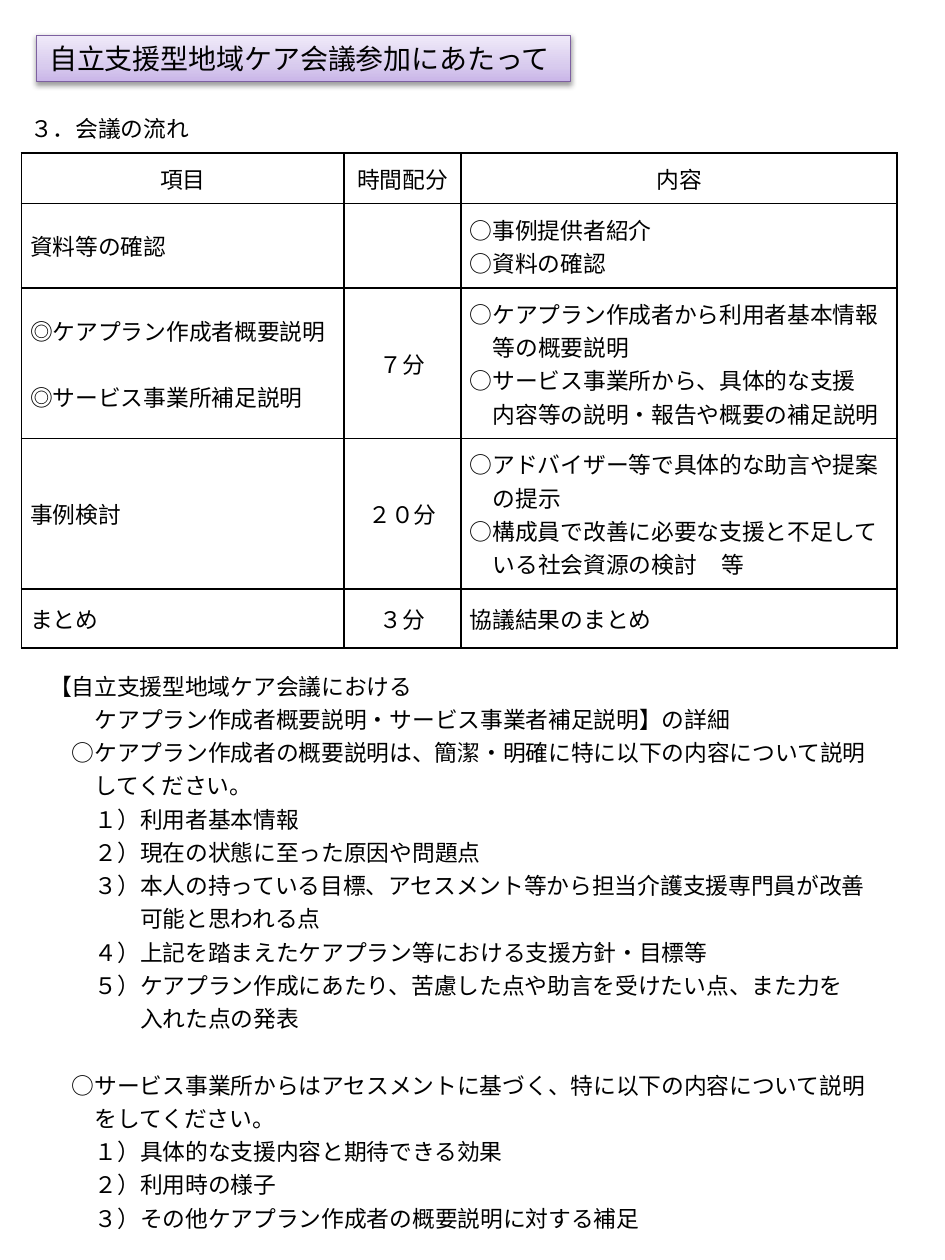
from dataclasses import dataclass

from lxml import etree
from pptx import Presentation
from pptx.dml.color import RGBColor
from pptx.enum import text as t
from pptx.oxml.ns import qn
from pptx.util import Inches, Pt


@dataclass(frozen=True)
class Theme:
    font: str = "Noto Sans CJK JP"
    ink: str = "000000"
    paper: str = "FFFFFF"
    banner_line: str = "7D60A0"
    banner_stops: tuple = ((0, "C9B5E8"), (35, "D8CBEE"), (100, "F0EAF9"))
    title_size: float = 16
    text_size: float = 13
    leading: float = 19
    cell_inset: float = 0.07


@dataclass(frozen=True)
class Line:
    text: str
    indent: int = 0  # in full-width characters
    gap: bool = False  # one line of space above
    tab: float = 0  # tab stop in inches


@dataclass(frozen=True)
class Step:
    height: float
    item: tuple[Line, ...]
    minutes: tuple[Line, ...]
    content: tuple[Line, ...]
    centred: tuple[int, ...] = (1,)


THEME = Theme()
COLUMNS = (2.56, 0.93, 3.46)
CAPTION = Line("３．会議の流れ")
CAPTION_HEIGHT = 0.4

STEPS = (
    Step(0.4, (Line("項目"),), (Line("時間配分"),), (Line("内容"),), centred=(0, 1, 2)),
    Step(0.66, (Line("資料等の確認"),), (),
         (Line("○事例提供者紹介"), Line("○資料の確認"))),
    Step(1.19, (Line("◎ケアプラン作成者概要説明"), Line("◎サービス事業所補足説明", gap=True)),
         (Line("７分"),),
         (Line("○ケアプラン作成者から利用者基本情報"), Line("等の概要説明", 1),
          Line("○サービス事業所から、具体的な支援"), Line("内容等の説明・報告や概要の補足説明", 1))),
    Step(1.19, (Line("事例検討"),), (Line("２０分"),),
         (Line("○アドバイザー等で具体的な助言や提案"), Line("の提示", 1),
          Line("○構成員で改善に必要な支援と不足して"),
          Line("いる社会資源の検討\t等", 1, tab=3.06))),
    Step(0.47, (Line("まとめ"),), (Line("３分"),), (Line("協議結果のまとめ"),)),
)

DETAILS = (
    Line("【自立支援型地域ケア会議における"),
    Line("ケアプラン作成者概要説明・サービス事業者補足説明】の詳細", 2),
    Line("○ケアプラン作成者の概要説明は、簡潔・明確に特に以下の内容について説明", 1),
    Line("してください。", 2),
    Line("１）利用者基本情報", 2),
    Line("２）現在の状態に至った原因や問題点", 2),
    Line("３）本人の持っている目標、アセスメント等から担当介護支援専門員が改善", 2),
    Line("可能と思われる点", 4),
    Line("４）上記を踏まえたケアプラン等における支援方針・目標等", 2),
    Line("５）ケアプラン作成にあたり、苦慮した点や助言を受けたい点、また力を", 2),
    Line("入れた点の発表", 4),
    Line("○サービス事業所からはアセスメントに基づく、特に以下の内容について説明", 1, gap=True),
    Line("をしてください。", 2),
    Line("１）具体的な支援内容と期待できる効果", 2),
    Line("２）利用時の様子", 2),
    Line("３）その他ケアプラン作成者の概要説明に対する補足", 2),
)


def add_element(parent, tag: str, **attributes):
    return etree.SubElement(parent, qn(tag), {k: str(v) for k, v in attributes.items()})


def add_run(paragraph, words: str, size: float) -> None:
    run = paragraph.add_run()
    run.text = words
    run.font.size = Pt(size)
    run.font.bold = False
    run.font.color.rgb = RGBColor.from_string(THEME.ink)
    run.font.name = THEME.font
    add_element(run.font._element, "a:ea", typeface=THEME.font)


def write_lines(frame, lines: tuple[Line, ...], align=t.PP_ALIGN.LEFT) -> None:
    for i, line in enumerate(lines):
        paragraph = frame.add_paragraph() if i else frame.paragraphs[0]
        paragraph.alignment = align
        paragraph.line_spacing = Pt(THEME.leading)
        paragraph.space_before = Pt(THEME.leading if line.gap else 0)
        props = paragraph._p.get_or_add_pPr()
        props.set("marL", "0")
        props.set("indent", str(Pt(THEME.text_size * line.indent)))
        add_element(props, "a:buNone")
        if line.tab:
            stops = add_element(props, "a:tabLst")
            add_element(stops, "a:tab", pos=Inches(line.tab), algn="l")
        add_run(paragraph, line.text, THEME.text_size)


def place(shape, left: float, top: float, width: float, height: float) -> None:
    shape.left, shape.top = Inches(left), Inches(top)
    shape.width, shape.height = Inches(width), Inches(height)


def draw_banner(title) -> None:
    place(title, 0.29, 0.28, 4.24, 0.37)
    title.fill.gradient()
    title.fill.gradient_angle = 90
    stops = title._element.spPr.find(".//" + qn("a:gsLst"))
    stops.clear()
    for percent, colour in THEME.banner_stops:
        stop = add_element(stops, "a:gs", pos=percent * 1000)
        add_element(stop, "a:srgbClr", val=colour)
    title.line.color.rgb = RGBColor.from_string(THEME.banner_line)
    title.line.width = Pt(0.75)

    effects = add_element(title._element.spPr, "a:effectLst")
    shadow = add_element(effects, "a:outerShdw", blurRad=Pt(3.1), dist=Pt(1.6),
                         dir=90 * 60000, rotWithShape=0)
    add_element(add_element(shadow, "a:srgbClr", val=THEME.ink), "a:alpha", val=38000)

    frame = title.text_frame
    frame.word_wrap = False
    frame.auto_size = t.MSO_AUTO_SIZE.NONE
    frame.vertical_anchor = t.MSO_ANCHOR.MIDDLE
    frame.paragraphs[0].alignment = t.PP_ALIGN.LEFT
    add_run(frame.paragraphs[0], "自立支援型地域ケア会議参加にあたって", THEME.title_size)


def format_cell(cell, sides: str) -> None:
    """Set insets, the borders on the given sides (of L, R, T, B), and the fill."""
    cell.margin_left = cell.margin_right = Inches(THEME.cell_inset)
    cell.margin_top = cell.margin_bottom = Inches(THEME.cell_inset)
    cell.vertical_anchor = t.MSO_ANCHOR.MIDDLE
    props = cell._tc.get_or_add_tcPr()
    for side in "LRTB":
        border = add_element(props, f"a:ln{side}", w=Pt(1))
        if side in sides:
            add_element(add_element(border, "a:solidFill"), "a:srgbClr", val=THEME.ink)
        else:
            add_element(border, "a:noFill")
    cell.fill.solid()
    cell.fill.fore_color.rgb = RGBColor.from_string(THEME.paper)


def draw_schedule(slide) -> None:
    heights = (CAPTION_HEIGHT, *(step.height for step in STEPS))
    schedule = slide.shapes.add_table(
        len(heights), len(COLUMNS), Inches(0.17), Inches(0.81),
        Inches(sum(COLUMNS)), Inches(sum(heights))).table
    schedule.first_row = schedule.horz_banding = False
    for column, width in zip(schedule.columns, COLUMNS):
        column.width = Inches(width)
    for row, height in zip(schedule.rows, heights):
        row.height = Inches(height)

    for cell in schedule.rows[0].cells:
        format_cell(cell, "B")
    caption = schedule.cell(0, 0)
    caption.merge(schedule.cell(0, len(COLUMNS) - 1))
    write_lines(caption.text_frame, (CAPTION,))

    for r, step in enumerate(STEPS, start=1):
        for c, lines in enumerate((step.item, step.minutes, step.content)):
            cell = schedule.cell(r, c)
            format_cell(cell, "LRTB")
            align = t.PP_ALIGN.CENTER if c in step.centred else t.PP_ALIGN.LEFT
            write_lines(cell.text_frame, lines, align)


def draw_details(body) -> None:
    place(body, 0.29, 5.24, 7.01, 4.63)
    body.text_frame.word_wrap = True
    body.text_frame.auto_size = t.MSO_AUTO_SIZE.NONE
    body.text_frame.vertical_anchor = t.MSO_ANCHOR.TOP
    write_lines(body.text_frame, DETAILS)


def main() -> None:
    deck = Presentation()
    deck.slide_width, deck.slide_height = Inches(7.5), Inches(10)
    slide = deck.slides.add_slide(deck.slide_layouts[1])
    draw_schedule(slide)
    draw_banner(slide.shapes.title)
    draw_details(slide.placeholders[1])
    deck.save("out.pptx")


if __name__ == "__main__":
    main()
